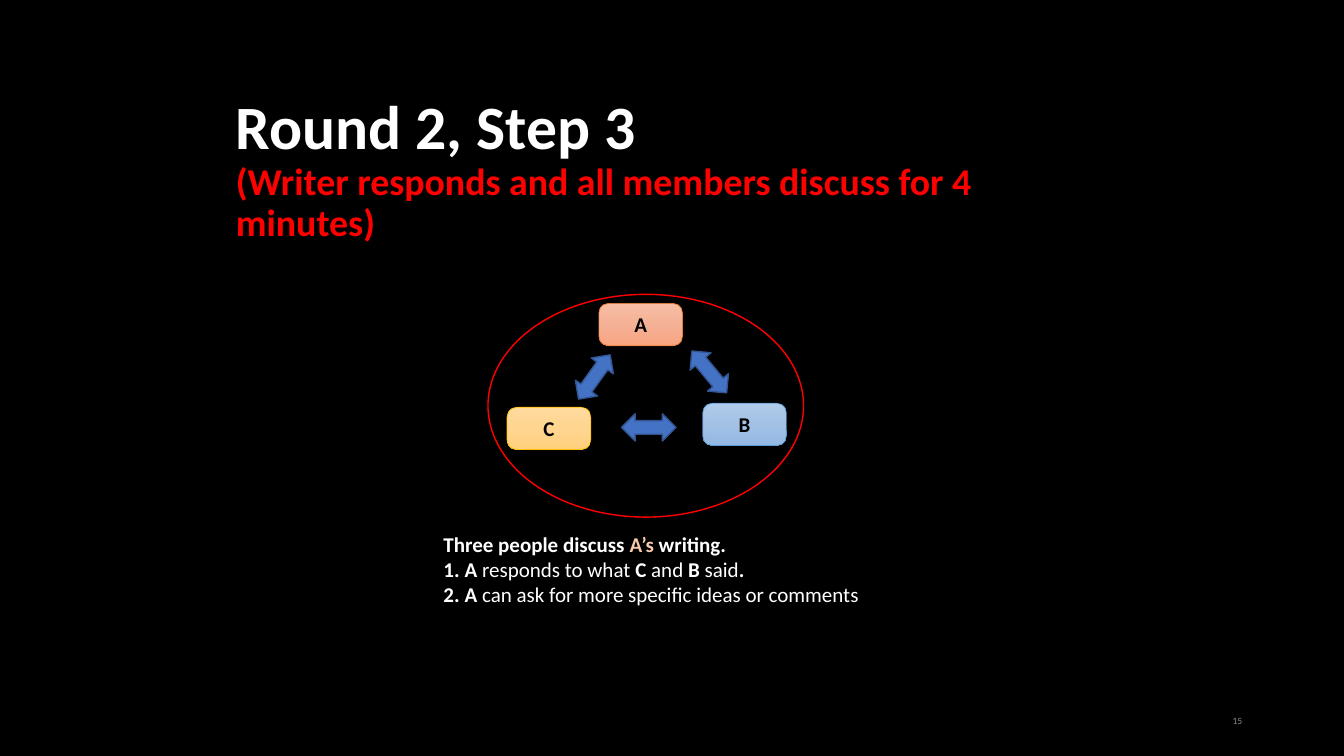
import copy
import pptx
import pptx.util
import pptx.dml.color
import pptx.enum.shapes
import pptx.enum.text
import pptx.oxml.ns
import lxml.etree

PX = 9144
SHAPE = pptx.enum.shapes.MSO_SHAPE
ALIGN = pptx.enum.text.PP_ALIGN
MIDDLE = pptx.enum.text.MSO_ANCHOR.MIDDLE
FIT = pptx.enum.text.MSO_AUTO_SIZE
qn = pptx.oxml.ns.qn


def colour(code):
    return pptx.dml.color.RGBColor.from_string(code)


def write(paragraph, text, size=15, color="FFFFFF", bold=False, align=None):
    if align is not None:
        paragraph.alignment = align
    run = paragraph.add_run()
    run.text = text
    run.font.name = "Calibri"
    run.font.size = pptx.util.Pt(size)
    run.font.bold = bold
    run.font.color.rgb = colour(color)


deck = pptx.Presentation()
deck.slide_width, deck.slide_height = 1333 * PX, 750 * PX
slide = deck.slides.add_slide(deck.slide_layouts[5])
slide.background.fill.solid()
slide.background.fill.fore_color.rgb = colour("000000")

heading = slide.shapes.title
heading.left, heading.top, heading.width, heading.height = 224 * PX, 94 * PX, 884 * PX, 150 * PX
heading.text_frame.word_wrap = True
heading.text_frame.auto_size = FIT.NONE
heading.text_frame.vertical_anchor = MIDDLE
round_step = heading.text_frame.paragraphs[0]
round_step.line_spacing = 0.9
write(round_step, "Round 2, Step 3", size=44, bold=True, align=ALIGN.LEFT)
round_step.add_line_break()
write(round_step, "(Writer responds and all members discuss for 4 minutes)", size=27, color="FF0000", bold=True)

page_number = slide.shapes.add_textbox(942 * PX, 695 * PX, 300 * PX, 40 * PX).text_frame
page_number.word_wrap = True
page_number.vertical_anchor = MIDDLE
write(page_number.paragraphs[0], "15", size=6.8, color="8C8C8C", align=ALIGN.RIGHT)

members = [
    ("A", 594, 301, ["F7BDA5", "F5B196", "F8A582"], "ED7D31"),
    ("B", 697, 400, ["B1CBE9", "A3C1E5", "93B9E4"], "5B9BD5"),
    ("C", 503, 404, ["FFDB9E", "FFD590", "FFD07C"], "FFC000"),
]
for letter, left, top, shades, edge in members:
    member = slide.shapes.add_shape(SHAPE.ROUNDED_RECTANGLE, left * PX, top * PX, 83 * PX, 42 * PX)
    member.adjustments[0] = 0.23
    member.shadow.inherit = False
    member.fill.gradient()
    member.fill.gradient_angle = 270
    stops = member.element.spPr.find(".//" + qn("a:gsLst"))
    stops.append(copy.deepcopy(stops[-1]))
    for stop, shade, position in zip(member.fill.gradient_stops, shades, (0, 0.5, 1)):
        stop.color.rgb = colour(shade)
        stop.position = position
    member.line.color.rgb = colour(edge)
    member.line.width = pptx.util.Pt(0.5)
    member.text_frame.vertical_anchor = MIDDLE
    write(member.text_frame.paragraphs[0], letter, color="000000", bold=True, align=ALIGN.CENTER)

for left, top, turn in [(690, 342, 320.3), (630, 397, 270), (576, 347, 35.6)]:
    exchange = slide.shapes.add_shape(SHAPE.UP_DOWN_ARROW, left * PX, top * PX, 27 * PX, 54 * PX)
    exchange.rotation = turn
    exchange.shadow.inherit = False
    exchange.fill.solid()
    exchange.fill.fore_color.rgb = colour("4472C4")
    exchange.line.color.rgb = colour("325491")
    exchange.line.width = pptx.util.Pt(1)

group_ring = slide.shapes.add_shape(SHAPE.OVAL, 484 * PX, 292 * PX, 313 * PX, 221 * PX)
group_ring.shadow.inherit = False
group_ring.fill.background()
group_ring.line.color.rgb = colour("FF0000")
group_ring.line.width = pptx.util.Pt(1)

instructions = slide.shapes.add_textbox(430 * PX, 522 * PX, 448 * PX, 86 * PX).text_frame
instructions.word_wrap = True
instructions.auto_size = FIT.SHAPE_TO_FIT_TEXT
summary = instructions.paragraphs[0]
write(summary, "Three people discuss ", bold=True)
write(summary, "A’s", color="F8CBAD", bold=True)
write(summary, " writing.", bold=True)

steps = [
    ["A ", "responds to what ", "C ", "and", " B ", "said", "."],
    ["A ", "can ask for more specific ideas or comments"],
]
for parts in steps:
    step = instructions.add_paragraph()
    numbering = step._p.get_or_add_pPr()
    numbering.set("marL", str(21 * PX))
    numbering.set("indent", str(-21 * PX))
    lxml.etree.SubElement(numbering, qn("a:buFont"), typeface="+mj-lt")
    lxml.etree.SubElement(numbering, qn("a:buAutoNum"), type="arabicPeriod")
    for index, part in enumerate(parts):
        write(step, part, bold=index % 2 == 0)

deck.save("out.pptx")
